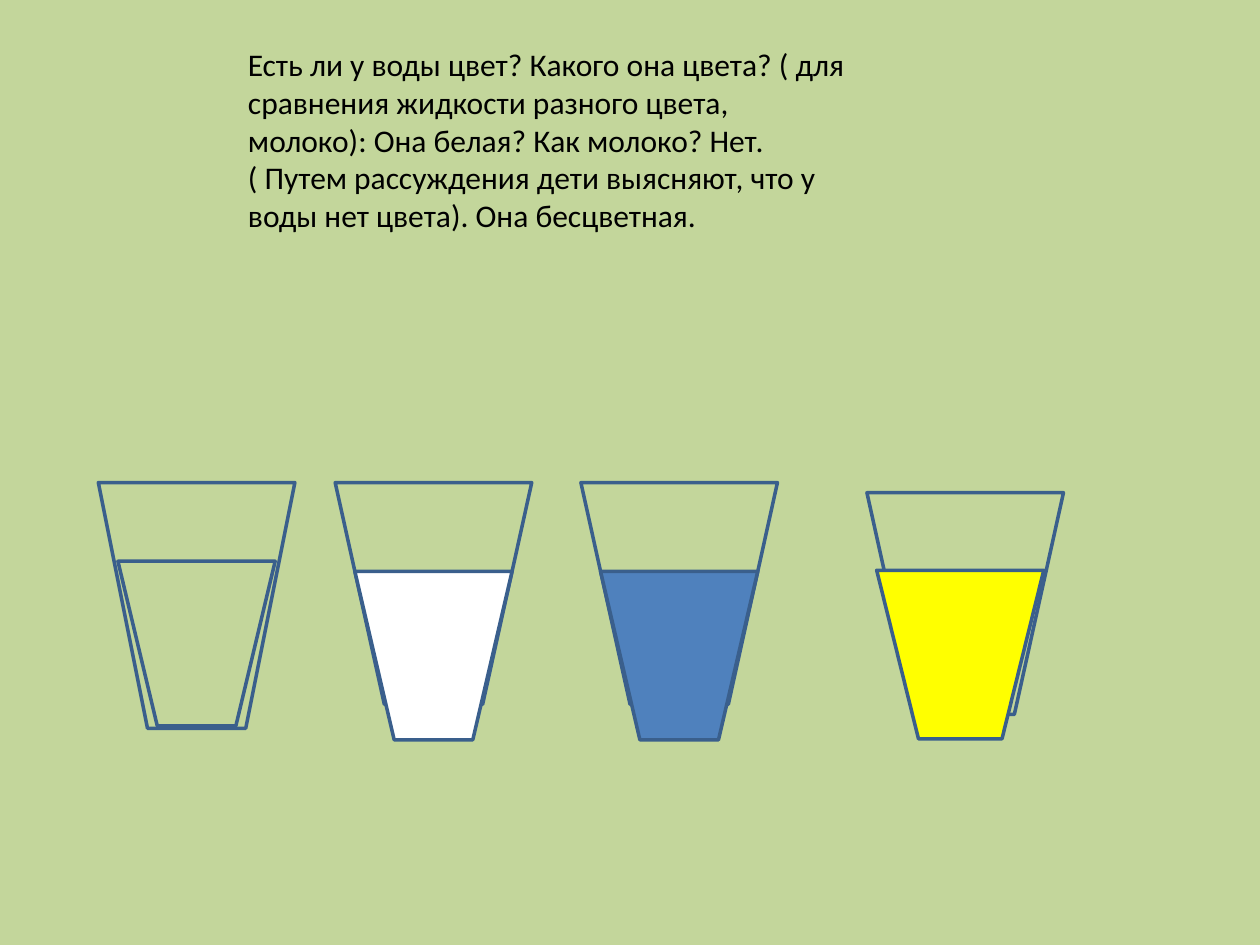
from pptx import Presentation
from pptx.dml.color import RGBColor
from pptx.enum.shapes import MSO_SHAPE
from pptx.enum.text import MSO_AUTO_SIZE
from pptx.util import Inches, Pt

TRAPEZOID = MSO_SHAPE.TRAPEZOID
FIT_SHAPE = MSO_AUTO_SIZE.SHAPE_TO_FIT_TEXT
BLANK_LAYOUT = 6
SLIDE_W, SLIDE_H = 10, 7.5
COLORS = {
    "background": "C3D69B",
    "text": "000000",
    "outline": "3A5F8C",
    "milk": "FFFFFF",
    "blue": "4F81BD",
    "yellow": "FFFF00",
}
QUESTION = (
    "Есть ли у воды цвет? Какого она цвета? ( для сравнения жидкости разного "
    "цвета, молоко): Она белая? Как молоко? Нет. ( Путем рассуждения дети "
    "выясняют, что у воды нет цвета). Она бесцветная."
)
QUESTION_BOX = (0.187 * SLIDE_W, 0.041 * SLIDE_H, 0.5 * SLIDE_W, 0.216 * SLIDE_H)

# Glass box (left, top, width, height); liquid as shares of that box; liquid colour.
GLASSES = [
    ((0.78, 3.83, 1.56, 1.95), (0.1, 0.32, 0.8, 0.67), None),
    ((2.66, 3.83, 1.56, 1.76), (0.1, 0.4, 0.8, 0.76), "milk"),
    ((4.61, 3.83, 1.56, 1.76), (0.1, 0.4, 0.8, 0.76), "blue"),
    ((6.88, 3.91, 1.56, 1.76), (0.05, 0.35, 0.85, 0.76), "yellow"),
]


def color(name):
    return RGBColor.from_string(COLORS[name])


def add_text(slide, box, text, size=18, font="Calibri", ink="text"):
    frame = slide.shapes.add_textbox(*map(Inches, box)).text_frame
    frame.word_wrap = True
    frame.auto_size = FIT_SHAPE
    run = frame.paragraphs[0].add_run()
    run.text = text
    run.font.size = Pt(size)
    run.font.name = font
    run.font.color.rgb = color(ink)


def add_cup(slide, box, fill=None):
    """Draw a trapezoid with its wide side up, hollow unless a fill is named."""
    cup = slide.shapes.add_shape(TRAPEZOID, *map(Inches, box))
    cup.rotation = 180
    cup.shadow.inherit = False
    cup.line.color.rgb = color("outline")
    cup.line.width = Pt(2)
    if fill:
        cup.fill.solid()
        cup.fill.fore_color.rgb = color(fill)
    else:
        cup.fill.background()


def add_glass(slide, box, liquid_share, liquid):
    left, top, width, height = box
    x, y, w, h = liquid_share
    add_cup(slide, box)
    add_cup(slide, (left + x * width, top + y * height, w * width, h * height), liquid)


def main():
    prs = Presentation()
    prs.slide_width, prs.slide_height = Inches(SLIDE_W), Inches(SLIDE_H)
    slide = prs.slides.add_slide(prs.slide_layouts[BLANK_LAYOUT])
    slide.background.fill.solid()
    slide.background.fill.fore_color.rgb = color("background")
    add_text(slide, QUESTION_BOX, QUESTION)
    for box, liquid_share, liquid in GLASSES:
        add_glass(slide, box, liquid_share, liquid)
    prs.save("out.pptx")


if __name__ == "__main__":
    main()
